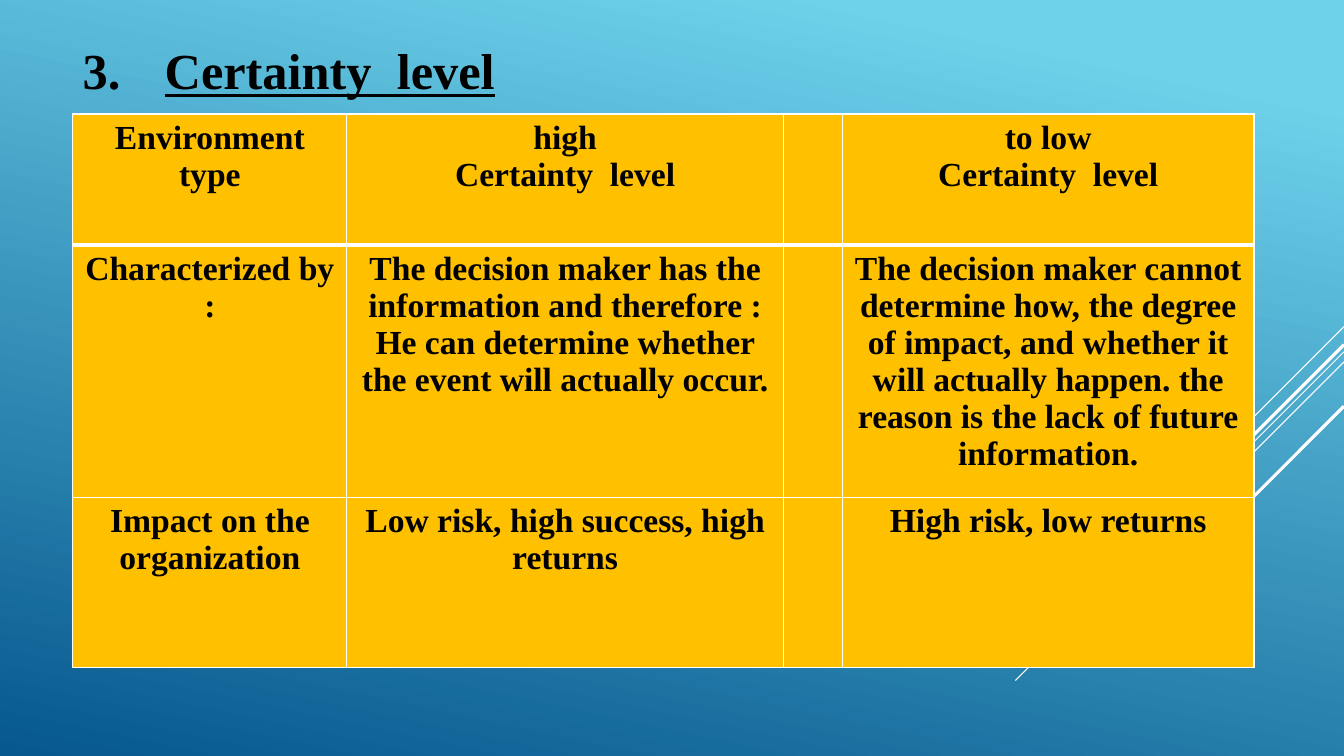
from lxml import etree
from pptx import Presentation
from pptx.dml.color import RGBColor
from pptx.enum.shapes import MSO_CONNECTOR
from pptx.enum.text import MSO_AUTO_SIZE, PP_ALIGN
from pptx.oxml.ns import qn
from pptx.util import Pt

STRAIGHT = MSO_CONNECTOR.STRAIGHT
CENTER = PP_ALIGN.CENTER
GROW = MSO_AUTO_SIZE.SHAPE_TO_FIT_TEXT

COLORS = {"sky": "6ED2EB", "deep": "06588E", "line": "FFFFFF", "cell": "FFC000", "text": "000000"}
FONT = "Times New Roman"
SLIDE_WIDTH, SLIDE_HEIGHT = 960, 540

DIAGONALS = [
    (233.3, 72, 0.75),
    (251.3, 234.7, 0.75),
    (258.5, 149.3, 0.75),
    (246.2, 137.5, 2.25),
    (290.2, 100, 2.25),
]
COLUMN_WIDTHS = [195.8, 311.8, 42.2, 294]
ROW_HEIGHTS = [93.6, 180, 121.7]
CERTAINTY_ROWS = [
    ["Environment type", "high\nCertainty  level", "", "to low\nCertainty  level"],
    [
        "Characterized by :",
        "The decision maker has the information and therefore : "
        "He can determine whether the event will actually occur.",
        "",
        "The decision maker cannot determine how, the degree of impact, and whether it "
        "will actually happen. the reason is the lack of future information.",
    ],
    ["Impact on the organization", "Low risk, high success, high returns", "", "High risk, low returns"],
]


class SlideBuilder:
    def __init__(self, page):
        self.page = page

    def color(self, name):
        return RGBColor.from_string(COLORS[name])

    def style(self, font, **extra):
        values = {"name": FONT, "bold": True, **extra}
        for key, value in values.items():
            setattr(font, key, value)
        font.color.rgb = self.color("text")

    def background(self):
        fill = self.page.background.fill
        fill.gradient()
        fill.gradient_angle = 258
        for stop, name, position in zip(fill.gradient_stops, ("sky", "deep"), (0.1, 1)):
            stop.color.rgb = self.color(name)
            stop.position = position

    def diagonal(self, top, reach, weight):
        line = self.page.shapes.add_connector(
            STRAIGHT, Pt(SLIDE_WIDTH), Pt(top), Pt(SLIDE_WIDTH - reach), Pt(top + reach)
        )
        line.line.color.rgb = self.color("line")
        line.line.width = Pt(weight)
        etree.SubElement(line._element.spPr, qn("a:effectLst"))

    def numbered_title(self, text, number, left, top, width, height):
        box = self.page.shapes.add_textbox(Pt(left), Pt(top), Pt(width), Pt(height))
        frame = box.text_frame
        frame.word_wrap = True
        frame.auto_size = GROW
        para = frame.paragraphs[0]
        properties = para._p.get_or_add_pPr()
        properties.set("marL", str(Pt(58.5)))
        properties.set("indent", str(Pt(-58.5)))
        etree.SubElement(properties, qn("a:buFont"), typeface=FONT)
        etree.SubElement(properties, qn("a:buAutoNum"), type="arabicPeriod", startAt=str(number))
        span = para.add_run()
        span.text = text
        self.style(span.font, size=Pt(36), underline=True)

    def border(self, cell, side, weight):
        properties = cell._tc.get_or_add_tcPr()
        line = etree.SubElement(properties, qn(f"a:ln{side}"), w=str(Pt(weight)))
        fill = etree.SubElement(line, qn("a:solidFill"))
        etree.SubElement(fill, qn("a:srgbClr"), val=COLORS["line"])

    def table(self, rows, left, top, widths, heights):
        frame = self.page.shapes.add_table(
            len(rows), len(widths), Pt(left), Pt(top), Pt(sum(widths)), Pt(sum(heights))
        )
        table = frame.table
        for column, width in zip(table.columns, widths):
            column.width = Pt(width)
        for index, (row, height) in enumerate(zip(rows, heights)):
            table.rows[index].height = Pt(height)
            weights = {
                "L": 1,
                "R": 1,
                "T": 3 if index == 1 else 1,
                "B": 3 if index == 0 else 1,
            }
            for cell, text in zip(table.rows[index].cells, row):
                for side, weight in weights.items():
                    self.border(cell, side, weight)
                cell.fill.solid()
                cell.fill.fore_color.rgb = self.color("cell")
                cell.text = text
                for para in cell.text_frame.paragraphs:
                    para.alignment = CENTER
                    for span in para.runs:
                        self.style(span.font, size=Pt(24))


def main():
    deck = Presentation()
    deck.slide_width, deck.slide_height = Pt(SLIDE_WIDTH), Pt(SLIDE_HEIGHT)
    builder = SlideBuilder(deck.slides.add_slide(deck.slide_layouts[6]))
    builder.background()
    for diagonal in DIAGONALS:
        builder.diagonal(*diagonal)
    builder.numbered_title("Certainty  level", 3, 52, 24.5, 843.8, 51)
    builder.table(CERTAINTY_ROWS, 52, 81.5, COLUMN_WIDTHS, ROW_HEIGHTS)
    deck.save("out.pptx")


if __name__ == "__main__":
    main()
